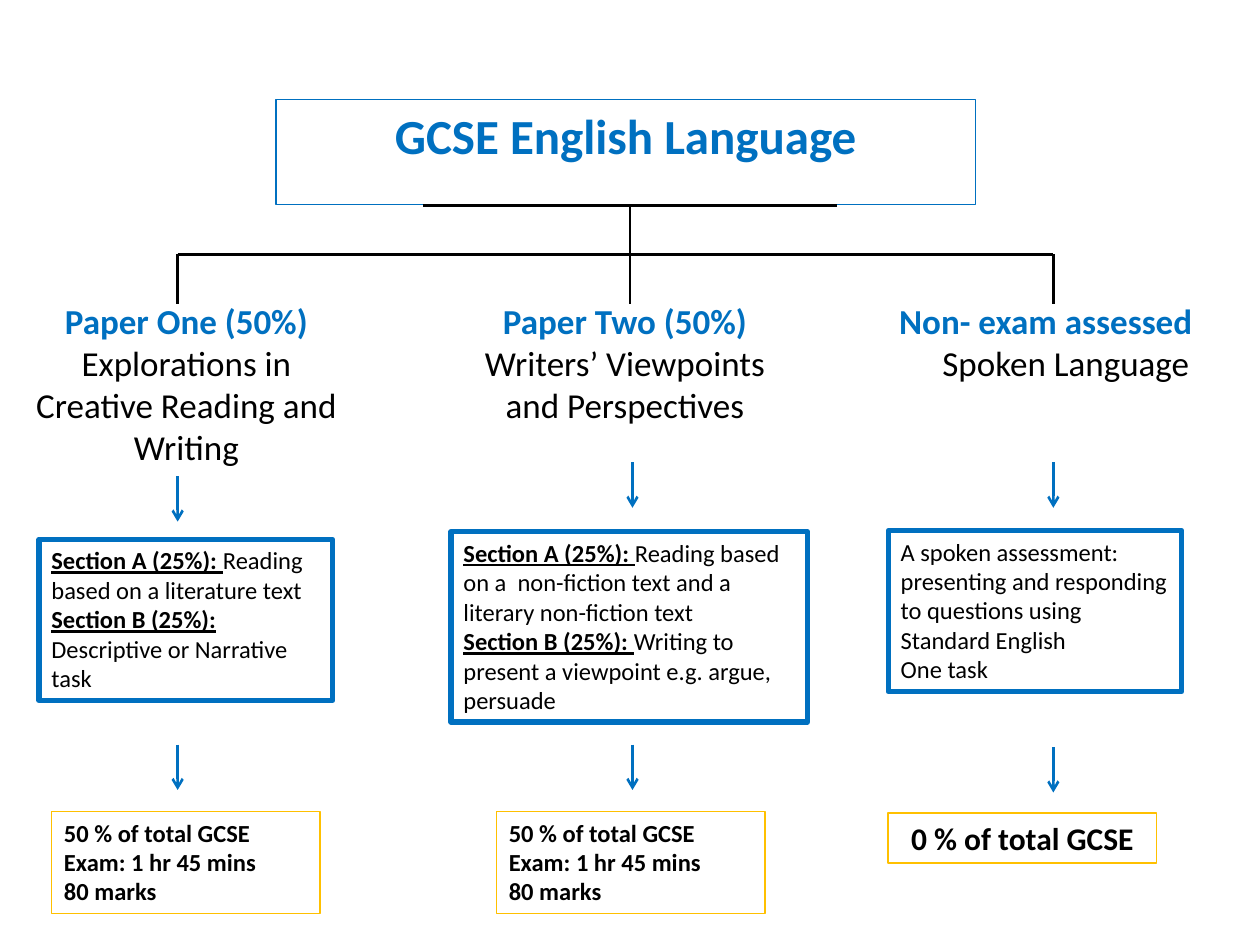
from pptx import Presentation
from pptx.dml.color import RGBColor
from pptx.enum.shapes import MSO_CONNECTOR as Connector, MSO_SHAPE as Shape
from pptx.enum.text import MSO_ANCHOR as Anchor, MSO_AUTO_SIZE as AutoSize, PP_ALIGN as Align
from pptx.oxml.ns import qn
from pptx.util import Inches, Pt
from lxml.etree import SubElement

COLORS = {"blue": "0070C0", "gold": "FFC000", "black": "000000", "white": "FFFFFF"}
FONT = "Calibri"


def color(name):
    return RGBColor.from_string(COLORS[name])


def plain(text):
    return [(text, {})]


def section(label, text):
    return [(label, {"bold": True, "underline": True}), (text, {})]


class SlideBuilder:
    def __init__(self, slide):
        self.slide = slide

    def add_text(self, shape, paragraphs, size, align=Align.LEFT, indents=(), **style):
        """Fill a shape with paragraphs, each a list of (text, run style) pairs."""
        frame = shape.text_frame
        frame.word_wrap = True
        frame.auto_size = AutoSize.SHAPE_TO_FIT_TEXT
        frame.vertical_anchor = Anchor.TOP
        for index, runs in enumerate(paragraphs):
            paragraph = frame.paragraphs[0] if index == 0 else frame.add_paragraph()
            paragraph.alignment = align
            if indents:
                properties = paragraph._p.get_or_add_pPr()
                properties.set("marL", str(Inches(indents[index])))
            for text, run_style in runs:
                run = paragraph.add_run()
                run.text = text
                look = {"bold": False, "underline": False, "color": "black"} | style | run_style
                run.font.name = FONT
                run.font.size = Pt(size)
                run.font.bold = look["bold"]
                run.font.underline = look["underline"]
                run.font.color.rgb = color(look["color"])

    def title(self, text, left, top, width, height):
        shape = self.slide.shapes.title
        shape.left, shape.top = Inches(left), Inches(top)
        shape.width, shape.height = Inches(width), Inches(height)
        shape.line.color.rgb = color("blue")
        shape.line.width = Pt(0.75)
        self.add_text(shape, [plain(text)], 28, Align.CENTER, bold=True, color="blue")

    def heading(self, name, description, left, width, height, indents=()):
        shape = self.slide.shapes.add_textbox(
            Inches(left), Inches(2.33), Inches(width), Inches(height))
        paragraphs = [[(name, {"bold": True, "color": "blue"})], plain(description)]
        self.add_text(shape, paragraphs, 20, Align.CENTER, indents)

    def box(self, paragraphs, left, top, width, height, border, weight, size=14, **style):
        shape = self.slide.shapes.add_shape(
            Shape.RECTANGLE, Inches(left), Inches(top), Inches(width), Inches(height))
        shape.shadow.inherit = False
        shape.fill.solid()
        shape.fill.fore_color.rgb = color("white")
        shape.line.color.rgb = color(border)
        shape.line.width = Pt(weight)
        self.add_text(shape, paragraphs, size, **style)

    def line(self, start, end, line_color="black", arrow=False):
        connector = self.slide.shapes.add_connector(
            Connector.STRAIGHT, *(Inches(value) for value in (*start, *end)))
        connector.line.color.rgb = color(line_color)
        connector.line.width = Pt(1.5)
        if arrow:
            SubElement(connector.line._get_or_add_ln(), qn("a:tailEnd"), type="arrow")
        SubElement(connector._element.spPr, qn("a:effectLst"))

    def down_arrow(self, x, top):
        self.line((x, top), (x, top + 0.36), "blue", arrow=True)


def main():
    presentation = Presentation()
    presentation.slide_width, presentation.slide_height = Inches(10), Inches(7.5)
    title_only = presentation.slide_layouts[5]
    builder = SlideBuilder(presentation.slides.add_slide(title_only))

    builder.title("GCSE English Language", 2.19, 0.79, 5.55, 0.57)

    # Tree from the title to the three components
    left_x, middle_x, right_x = 1.41, 5, 8.36
    top_y, branch_y, bottom_y = 1.63, 2.02, 2.41
    builder.line((3.36, top_y), (6.64, top_y))
    builder.line((middle_x, top_y), (middle_x, branch_y))
    builder.line((left_x, branch_y), (right_x, branch_y))
    for x in (left_x, middle_x, right_x):
        builder.line((x, branch_y), (x, bottom_y))

    builder.heading("Paper One (50%)", "Explorations in Creative Reading and Writing",
                    0.08, 2.8, 1.45)
    builder.heading("Paper Two (50%)", "Writers’ Viewpoints and Perspectives",
                    3.67, 2.58, 1.11)
    builder.heading("Non- exam assessed", "Spoken Language",
                    6.25, 3.36, 0.77, indents=(0.74, 1.06))

    content_boxes = [
        ([section("Section A (25%): ", "Reading based on a literature text"),
          section("Section B (25%): ", "Descriptive or Narrative task")],
         0.31, 4.28, 2.33, 1.28),
        ([section("Section A (25%): ",
                  "Reading based on a  non-fiction text and a literary non-fiction text"),
          section("Section B (25%): ", "Writing to present a viewpoint e.g. argue, persuade")],
         3.58, 4.22, 2.83, 1.51),
        ([plain("A spoken assessment: presenting and responding to questions "
                "using Standard English"),
          plain("One task")],
         7.05, 4.21, 2.33, 1.28),
    ]
    for paragraphs, *place in content_boxes:
        builder.box(paragraphs, *place, border="blue", weight=3)

    exam = [plain(text) for text in ("50 % of total GCSE", "Exam: 1 hr 45 mins", "80 marks")]
    for left in (0.41, 3.94):
        builder.box(exam, left, 6.44, 2.13, 0.81, "gold", 1, bold=True)
    builder.box([plain("0 % of total GCSE")], 7.05, 6.45, 2.13, 0.4, "gold", 1,
                size=18, align=Align.CENTER, bold=True)

    for x, *tops in ((left_x, 3.78, 5.91), (5.02, 3.67, 5.91), (right_x, 3.67, 5.93)):
        for top in tops:
            builder.down_arrow(x, top)

    presentation.save("out.pptx")


if __name__ == "__main__":
    main()
